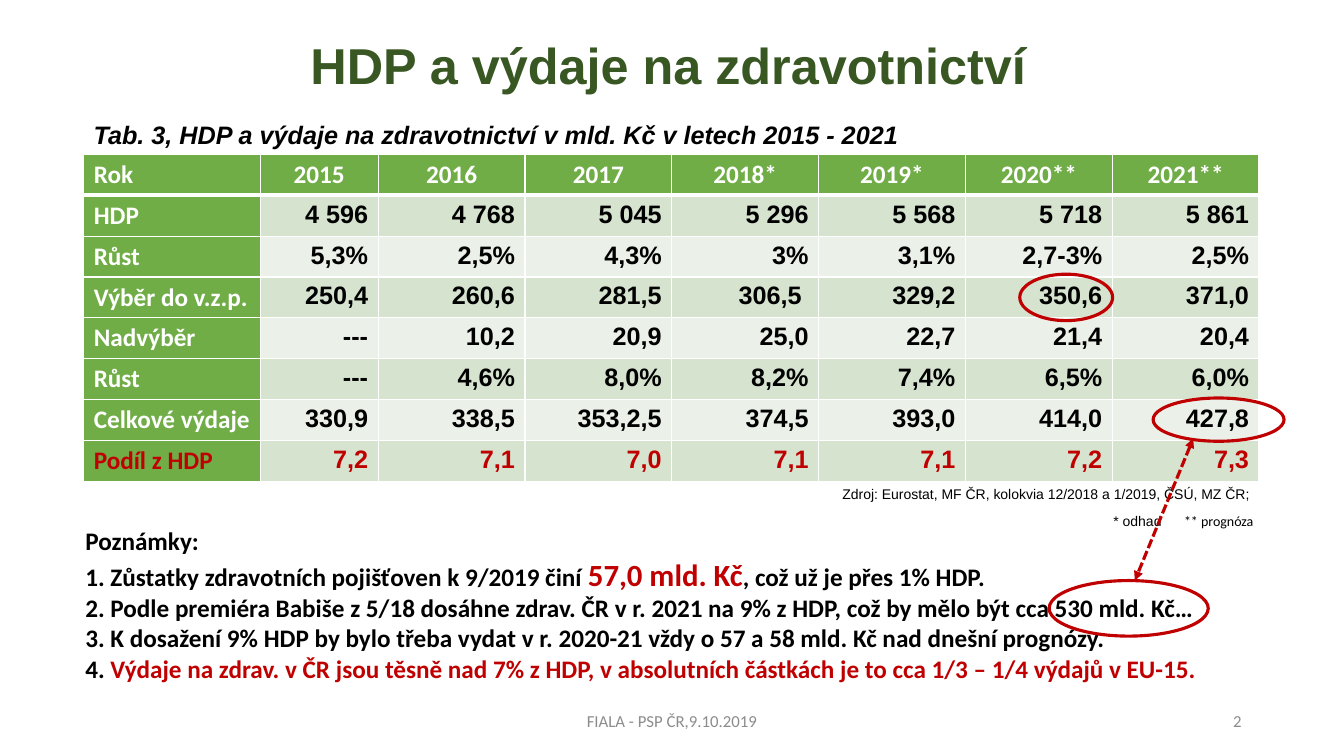
from lxml.etree import SubElement
from pptx import Presentation
from pptx.dml.color import RGBColor
from pptx.enum.dml import MSO_LINE
from pptx.enum.shapes import MSO_CONNECTOR, MSO_SHAPE
from pptx.enum.text import MSO_ANCHOR, PP_ALIGN
from pptx.oxml.ns import qn
from pptx.util import Cm, Pt

COLORS = {
    "title": "385723", "text": "000000", "white": "FFFFFF", "accent": "C00000",
    "green": "70AD47", "band_dark": "D5E3CF", "band_light": "EBF1E9", "grey": "8C8C8C",
}
LEFT, CENTER, RIGHT = PP_ALIGN.LEFT, PP_ALIGN.CENTER, PP_ALIGN.RIGHT

TABLE_ROWS = [
    ["Rok", "2015", "2016", "2017", "2018*", "2019*", "2020**", "2021**"],
    ["HDP", "4 596", "4 768", "5 045", "5 296", "5 568", "5 718", "5 861"],
    ["Růst", "5,3%", "2,5%", "4,3%", "3%", "3,1%", "2,7-3%", "2,5%"],
    ["Výběr do v.z.p.", "250,4", "260,6", "281,5", "306,5 ", "329,2", "350,6", "371,0"],
    ["Nadvýběr", "---", "10,2", "20,9", "25,0", "22,7", "21,4", "20,4"],
    ["Růst", "---", "4,6%", "8,0%", "8,2%", "7,4%", "6,5%", "6,0%"],
    ["Celkové výdaje", "330,9", "338,5", "353,2,5", "374,5", "393,0", "414,0", "427,8"],
    ["Podíl z HDP", "7,2", "7,1", "7,0", "7,1", "7,1", "7,2", "7,3"],
]
COLUMN_WIDTHS = [4.45, 2.97] + [3.7] * 6
ROW_HEIGHT = 1.03

# Each note is a list of runs: text, then any style that differs from the base
NOTES = [
    [("Poznámky:", {})],
    [("1. Zůstatky zdravotních pojišťoven k 9/2019 činí ", {}),
     ("57,0 mld. Kč", {"size": 22, "color": "accent"}),
     (", což už je přes 1% HDP.", {})],
    [("2. Podle premiéra Babiše z 5/18 dosáhne zdrav. ČR v r. 2021 na 9% z HDP, "
      "což by mělo být cca 530 mld. Kč…", {})],
    [("3. K dosažení 9% HDP by bylo třeba vydat v r. 2020-21 vždy o 57 a 58 mld. Kč "
      "nad dnešní prognózy.", {})],
    [("4. ", {}),
     ("Výdaje na zdrav. v ČR jsou těsně nad 7% z HDP, v absolutních částkách "
      "je to cca 1/3 – 1/4 výdajů v EU-15.", {"color": "accent"})],
]


def rgb(name):
    return RGBColor.from_string(COLORS[name])


class SlideBuilder:
    def __init__(self, slide):
        self.slide = slide
        self.line_width = Pt(2.25)

    def run(self, p, text, font="Arial", size=18, color="text", bold=False, italic=False):
        r = p.add_run()
        r.text = text
        r.font.name, r.font.size = font, Pt(size)
        r.font.bold, r.font.italic = bold, italic
        r.font.color.rgb = rgb(color)

    def title(self, text, x, y, w, h):
        sp = self.slide.shapes.title
        sp.left, sp.top, sp.width, sp.height = Cm(x), Cm(y), Cm(w), Cm(h)
        tf = sp.text_frame
        tf.vertical_anchor = MSO_ANCHOR.MIDDLE
        p = tf.paragraphs[0]
        p.alignment, p.line_spacing = CENTER, 0.9
        self.run(p, text, size=36, color="title", bold=True)

    def text(self, paragraphs, x, y, w, h, align=LEFT, anchor=MSO_ANCHOR.TOP,
             wrap=True, **style):
        """Add a text box; each paragraph is a list of (text, style changes)."""
        tf = self.slide.shapes.add_textbox(Cm(x), Cm(y), Cm(w), Cm(h)).text_frame
        tf.word_wrap, tf.vertical_anchor = wrap, anchor
        for i, runs in enumerate(paragraphs):
            p = tf.add_paragraph() if i else tf.paragraphs[0]
            p.alignment = align
            for content, changes in runs:
                self.run(p, content, **{**style, **changes})

    def line_of_text(self, content, *box, **style):
        self.text([[(content, {})]], *box, **style)

    def borders(self, cell, bottom):
        tc_pr = cell._tc.get_or_add_tcPr()
        for side, width in (("L", 1), ("R", 1), ("T", 1), ("B", bottom)):
            ln = SubElement(tc_pr, qn(f"a:ln{side}"), w=str(Pt(width)))
            fill = SubElement(ln, qn("a:solidFill"))
            SubElement(fill, qn("a:srgbClr"), val=COLORS["white"])

    def cell(self, cell, content, row, col):
        header, label = row == 0, col == 0
        self.borders(cell, bottom=3 if header else 1)
        band = "band_dark" if row % 2 else "band_light"
        cell.fill.solid()
        cell.fill.fore_color.rgb = rgb("green" if header or label else band)
        p = cell.text_frame.paragraphs[0]
        p.alignment = LEFT if label else CENTER if header else RIGHT
        if row == len(TABLE_ROWS) - 1:
            color = "accent"
        else:
            color = "white" if header or label else "text"
        font = "Calibri" if header or label else "Arial"
        self.run(p, content, font=font, color=color, bold=True)

    def table(self, rows, x, y):
        table = self.slide.shapes.add_table(
            len(rows), len(COLUMN_WIDTHS), Cm(x), Cm(y),
            Cm(sum(COLUMN_WIDTHS)), Cm(ROW_HEIGHT * len(rows))).table
        for column, width in zip(table.columns, COLUMN_WIDTHS):
            column.width = Cm(width)
        for i, values in enumerate(rows):
            table.rows[i].height = Cm(ROW_HEIGHT)
            for j, content in enumerate(values):
                self.cell(table.cell(i, j), content, i, j)

    def ring(self, x, y, w, h):
        sp = self.slide.shapes.add_shape(MSO_SHAPE.OVAL, Cm(x), Cm(y), Cm(w), Cm(h))
        sp.shadow.inherit = False
        sp.fill.background()
        sp.line.color.rgb = rgb("accent")
        sp.line.width = self.line_width

    def double_arrow(self, x1, y1, x2, y2):
        cxn = self.slide.shapes.add_connector(
            MSO_CONNECTOR.STRAIGHT, Cm(x1), Cm(y1), Cm(x2), Cm(y2))
        cxn.line.color.rgb = rgb("accent")
        cxn.line.width = self.line_width
        cxn.line.dash_style = MSO_LINE.SQUARE_DOT
        ln = cxn.line._get_or_add_ln()
        for end in ("headEnd", "tailEnd"):
            SubElement(ln, qn(f"a:{end}"), type="triangle")
        SubElement(cxn._element.spPr, qn("a:effectLst"))


def main():
    prs = Presentation()
    prs.slide_width, prs.slide_height = Cm(33.87), Cm(19.05)
    s = SlideBuilder(prs.slides.add_slide(prs.slide_layouts[5]))

    s.title("HDP a výdaje na zdravotnictví", 2.24, 0.76, 29.21, 1.93)
    s.table(TABLE_ROWS, 2.11, 3.89)
    s.line_of_text("Zdroj: Eurostat, MF ČR, kolokvia 12/2018 a 1/2019, ČSÚ, MZ ČR;",
                   20.98, 12.12, 10.95, 0.68, wrap=False, size=10)
    s.line_of_text("Tab. 3, HDP a výdaje na zdravotnictví v mld. Kč v letech 2015 - 2021",
                   2.11, 2.87, 21.34, 1.02, wrap=False, bold=True, italic=True)
    s.line_of_text("* odhad", 27.81, 12.78, 2.24, 0.68, size=10)
    s.text(NOTES, 1.9, 13.11, 28.58, 4.37, font="Calibri", bold=True)
    s.line_of_text("** prognóza", 29.59, 12.78, 2.31, 0.68, font="Calibri", size=10)

    footer = dict(anchor=MSO_ANCHOR.MIDDLE, font="Calibri", size=12, color="grey")
    s.line_of_text("FIALA - PSP ČR,9.10.2019", 11.22, 17.65, 11.43, 1.02,
                   align=CENTER, **footer)
    s.line_of_text("2", 23.92, 17.65, 7.62, 1.02, align=RIGHT, **footer)

    s.ring(26.44, 14.63, 4.01, 1.4)
    s.ring(25.7, 6.91, 2.34, 1.17)
    s.double_arrow(30.07, 11.05, 28.6, 14.63)
    s.ring(29.06, 10.03, 3.3, 1.09)
    prs.save("out.pptx")


if __name__ == "__main__":
    main()
